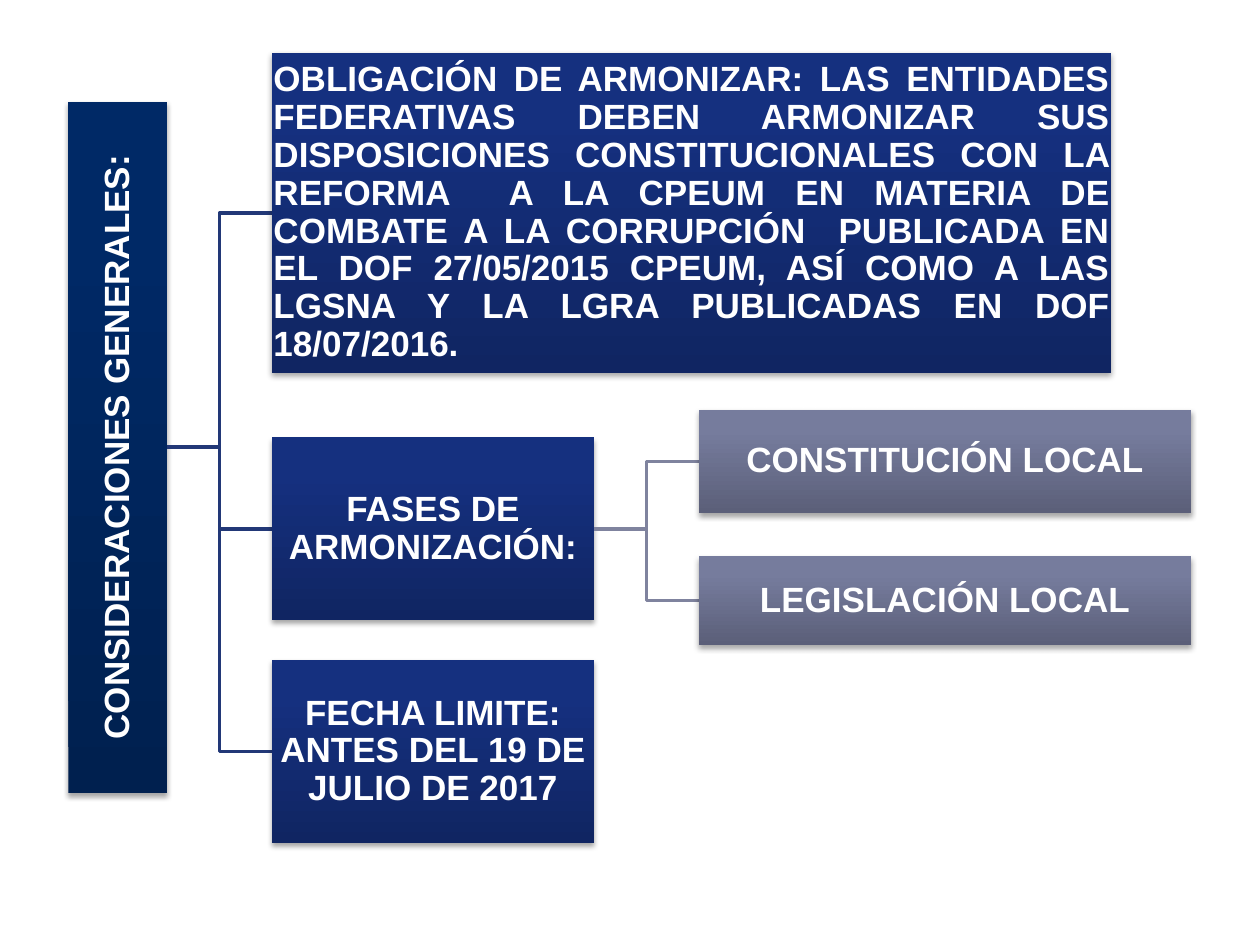
from lxml.etree import SubElement
from pptx import Presentation
from pptx.dml.color import RGBColor
from pptx.enum.dml import MSO_THEME_COLOR
from pptx.enum.shapes import MSO_CONNECTOR, MSO_SHAPE
from pptx.enum.text import MSO_ANCHOR, MSO_AUTO_SIZE, PP_ALIGN
from pptx.oxml import parse_xml
from pptx.oxml.ns import nsdecls, qn
from pptx.util import Pt

DEEP = ("00204F", "002966", "002A66")
NAVY = ("102562", "15307F", "132F82")
SLATE = ("5B5F79", "767C9D", "767C9F")
STOPS = (0, 80, 100)

# Boxes as left, top, width, height in points, as seen on the slide
ROOT = ("CONSIDERACIONES GENERALES:", (39, 58.2, 56.5, 394.8))
COLUMN, COLUMN_WIDTH = 155.4, 184
BRANCHES = [
    ("OBLIGACIÓN DE ARMONIZAR: LAS ENTIDADES FEDERATIVAS DEBEN ARMONIZAR SUS "
     "DISPOSICIONES CONSTITUCIONALES CON LA REFORMA  A LA CPEUM EN MATERIA DE "
     "COMBATE A LA CORRUPCIÓN  PUBLICADA EN EL DOF 27/05/2015 CPEUM, ASÍ COMO "
     "A LAS LGSNA Y LA LGRA PUBLICADAS EN DOF 18/07/2016.",
     (COLUMN, 30.2, 479.5, 183), PP_ALIGN.JUSTIFY),
    ("FASES DE ARMONIZACIÓN:", (COLUMN, 250, COLUMN_WIDTH, 104.4), PP_ALIGN.CENTER),
    ("FECHA LIMITE: ANTES DEL 19 DE JULIO DE 2017",
     (COLUMN, 377.2, COLUMN_WIDTH, 104.4), PP_ALIGN.CENTER),
]
PHASES_BOX = BRANCHES[1][1]
PHASES = [
    ("CONSTITUCIÓN LOCAL", (399.5, 234.2, 281, 59)),
    ("LEGISLACIÓN LOCAL", (399.5, 318, 281, 50.6)),
]


def rgb(value):
    return RGBColor.from_string(value)


def add_link(slide, parent, child, color):
    """Join the right side of one box to the left side of another."""
    left, top, width, height = parent
    link = slide.shapes.add_connector(
        MSO_CONNECTOR.ELBOW, Pt(left + width), Pt(top + height / 2),
        Pt(child[0]), Pt(child[1] + child[3] / 2))
    link.line.color.rgb = rgb(color)
    link.line.width = Pt(2)
    SubElement(link._element.spPr, qn("a:effectLst"))


def paint(shape, colors):
    """Give a shape a vertical gradient, no outline and a soft shadow."""
    stops = "".join(
        f'<a:gs pos="{stop * 1000}"><a:srgbClr val="{color}"/></a:gs>'
        for stop, color in zip(STOPS, colors))
    properties = shape._element.spPr
    properties.append(parse_xml(
        f'<a:gradFill {nsdecls("a")} rotWithShape="0"><a:gsLst>{stops}</a:gsLst>'
        '<a:lin ang="16200000" scaled="0"/></a:gradFill>'))
    shape.line.fill.background()
    properties.append(parse_xml(
        f'<a:effectLst {nsdecls("a")}><a:outerShdw blurRad="{Pt(3.1)}" '
        f'dist="{Pt(1.8)}" dir="5400000" rotWithShape="0"><a:srgbClr val="000000">'
        '<a:alpha val="35000"/></a:srgbClr></a:outerShdw></a:effectLst>'))


def write(shape, text, align=PP_ALIGN.CENTER, size=20, color="FFFFFF"):
    frame = shape.text_frame
    frame.word_wrap = True
    frame.auto_size = MSO_AUTO_SIZE.NONE
    frame.vertical_anchor = MSO_ANCHOR.MIDDLE
    frame.margin_left = frame.margin_right = Pt(0.9)
    frame.margin_top = frame.margin_bottom = Pt(0.9)
    para = frame.paragraphs[0]
    para.alignment = align
    para.line_spacing = 0.9
    span = para.add_run()
    span.text = text
    span.font.name = "Arial"
    span.font.size = Pt(size)
    span.font.bold = True
    span.font.color.rgb = rgb(color)


def add_box(slide, text, place, colors, **text_format):
    box = slide.shapes.add_shape(MSO_SHAPE.RECTANGLE, *map(Pt, place))
    paint(box, colors)
    write(box, text, **text_format)


def set_root(title, text, place):
    """Turn the title on its side so that it fills the given upright place."""
    left, top, width, height = place
    title.left = Pt(left + (width - height) / 2)
    title.top = Pt(top + (height - width) / 2)
    title.width, title.height = Pt(height), Pt(width)
    title.rotation = 270
    paint(title, DEEP)
    write(title, text)


def main():
    deck = Presentation()
    deck.slide_width, deck.slide_height = Pt(720), Pt(540)
    slide = deck.slides.add_slide(deck.slide_layouts[5])
    slide.background.fill.solid()
    slide.background.fill.fore_color.theme_color = MSO_THEME_COLOR.BACKGROUND_1

    set_root(slide.shapes.title, *ROOT)
    for text, place, align in BRANCHES:
        add_link(slide, ROOT[1], place, "223877")
        add_box(slide, text, place, NAVY, align=align)
    for text, place in PHASES:
        add_link(slide, PHASES_BOX, place, "7F839E")
        add_box(slide, text, place, SLATE)

    deck.save("out.pptx")


if __name__ == "__main__":
    main()
